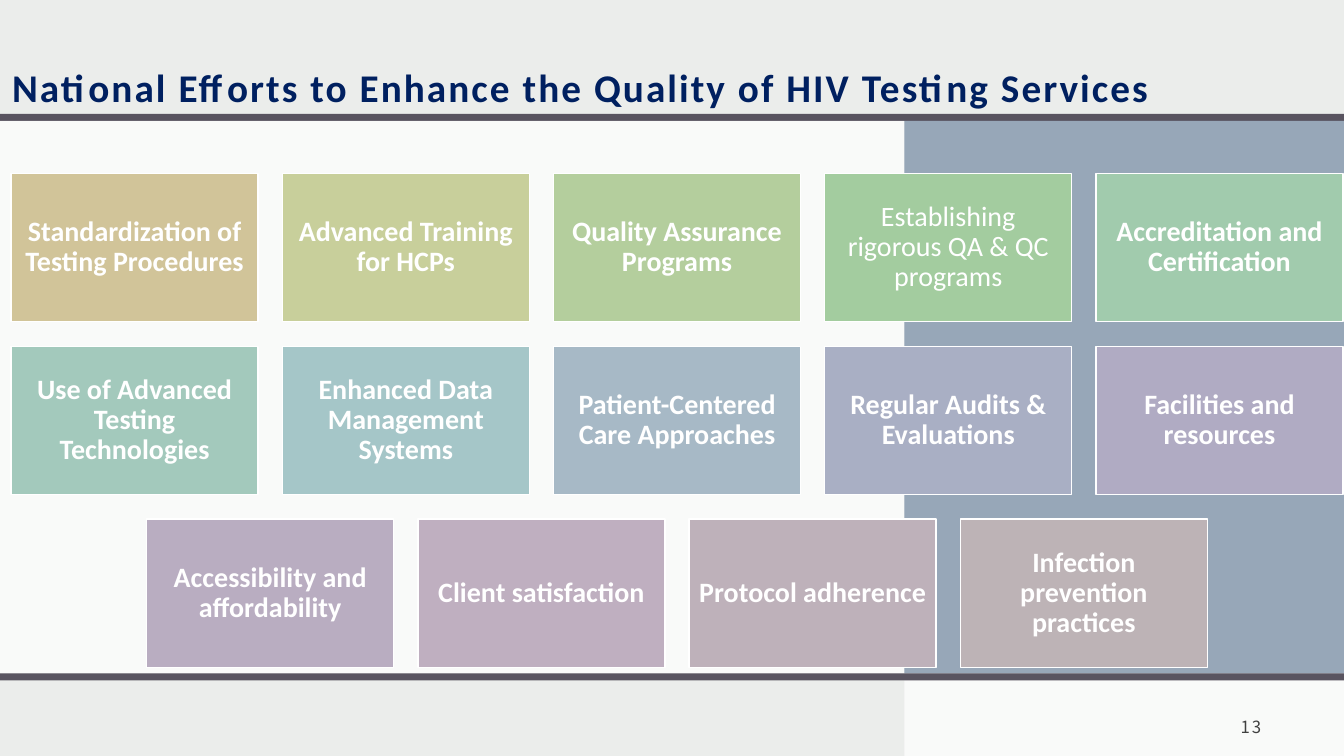
from dataclasses import dataclass

from pptx import Presentation
from pptx import util as u
from pptx.dml.color import RGBColor
from pptx.enum import shapes, text
from pptx.oxml.ns import qn
from lxml import etree

COLOURS = {
    "ground": "EBEDEB", "white": "FFFFFF", "rule": "595460",
    "slate": "97A7B8", "navy": "002060", "grey": "404040",
}
WIDTH, HEIGHT = 13.33, 7.5

# Card grid, in inches
GRID_LEFT, GRID_TOP = 0.11, 1.72
CARD_WIDTH, CARD_HEIGHT = 2.45, 1.47
COLUMN_STEP, ROW_STEP = 2.69, 1.715
COLUMNS = 5

# Horizontal and vertical divisions, in inches
SPLIT, BODY_TOP, FOOT_TOP, RULE = 8.97, 1.2, 6.68, 0.07


@dataclass
class Area:
    left: float
    top: float
    width: float
    height: float


@dataclass
class Panel:
    area: Area
    colour: str
    opacity: int = 100


@dataclass
class Card:
    label: str
    colour: str
    bold: bool = True


PANELS = [
    Panel(Area(0, BODY_TOP - RULE, WIDTH, RULE), "rule"),
    Panel(Area(0, BODY_TOP, SPLIT, FOOT_TOP - BODY_TOP), "white", 75),
    Panel(Area(SPLIT, FOOT_TOP + RULE, WIDTH - SPLIT, HEIGHT - FOOT_TOP - RULE), "white", 75),
    Panel(Area(SPLIT, BODY_TOP, WIDTH - SPLIT, FOOT_TOP - BODY_TOP), "slate"),
    Panel(Area(0, FOOT_TOP, WIDTH, RULE), "rule"),
]

CARD_ROWS = [
    [
        Card("Standardization of Testing Procedures", "D1C499"),
        Card("Advanced Training for HCPs", "C8CF9B"),
        Card("Quality Assurance Programs", "B4CE9D"),
        Card("Establishing rigorous QA & QC programs", "A3CC9F", bold=False),
        Card("Accreditation and Certification", "A1CBAD"),
    ],
    [
        Card("Use of Advanced Testing Technologies", "A3C9BC"),
        Card("Enhanced Data Management Systems", "A5C6C8"),
        Card("Patient-Centered Care Approaches", "A7B9C6"),
        Card("Regular Audits & Evaluations", "A9AFC4"),
        Card("Facilities and resources", "B0ABC3"),
    ],
    [
        Card("Accessibility and affordability", "B9ADC1"),
        Card("Client satisfaction", "BFAFC0"),
        Card("Protocol adherence", "BEB1BA"),
        Card("Infection prevention practices", "BDB3B6"),
    ],
]


def rgb(colour: str) -> RGBColor:
    return RGBColor.from_string(COLOURS.get(colour, colour))


def inches(area: Area) -> list:
    return [u.Inches(length) for length in (area.left, area.top, area.width, area.height)]


def add_box(page, area: Area, colour: str, outline: str = "", opacity: int = 100):
    box = page.shapes.add_shape(shapes.MSO_SHAPE.RECTANGLE, *inches(area))
    box.shadow.inherit = False
    box.fill.solid()
    box.fill.fore_color.rgb = rgb(colour)
    if opacity < 100:
        tint = box.fill._xPr.find(".//" + qn("a:srgbClr"))
        etree.SubElement(tint, qn("a:alpha")).set("val", str(opacity * 1000))
    if outline:
        box.line.color.rgb = rgb(outline)
        box.line.width = u.Pt(1)
    else:
        box.line.fill.background()
    return box


def write(box, words: str, *, size: float, colour: str, font: str = "Calibri",
          bold: bool = False, align=text.PP_ALIGN.LEFT, anchor=text.MSO_ANCHOR.BOTTOM,
          insets: tuple = (0.12, 0.12, 0.12, 0.1), tracking: float = 0,
          line_spacing: float = 1.0) -> None:
    frame = box.text_frame
    frame.word_wrap = True
    frame.vertical_anchor = anchor
    (frame.margin_left, frame.margin_top,
     frame.margin_right, frame.margin_bottom) = map(u.Inches, insets)
    para = frame.paragraphs[0]
    para.alignment = align
    para.line_spacing = line_spacing
    span = para.add_run()
    span.text = words
    span.font.size = u.Pt(size)
    span.font.name = font
    span.font.bold = bold
    span.font.color.rgb = rgb(colour)
    if tracking:
        span.font._element.set("spc", str(int(tracking * 100)))


def add_card(page, card: Card, column: float, row: int) -> None:
    area = Area(GRID_LEFT + column * COLUMN_STEP, GRID_TOP + row * ROW_STEP,
                CARD_WIDTH, CARD_HEIGHT)
    box = add_box(page, area, card.colour, outline="white")
    write(box, card.label, size=20, colour="white", bold=card.bold,
          align=text.PP_ALIGN.CENTER, anchor=text.MSO_ANCHOR.MIDDLE,
          insets=(0.08,) * 4, line_spacing=0.9)


def main() -> None:
    deck = Presentation()
    deck.slide_width, deck.slide_height = u.Inches(WIDTH), u.Inches(HEIGHT)
    page = deck.slides.add_slide(deck.slide_layouts[6])

    # Background panels and rules
    page.background.fill.solid()
    page.background.fill.fore_color.rgb = rgb("ground")
    for panel in PANELS:
        add_box(page, panel.area, panel.colour, opacity=panel.opacity)

    # Title
    title = page.shapes.add_textbox(*inches(Area(0, 0, WIDTH, 1.19)))
    write(title, "National Efforts to Enhance the Quality of HIV Testing Services",
          size=28, colour="navy", bold=True, tracking=1.5)

    # Cards, each row centred on the grid
    for row, cards in enumerate(CARD_ROWS):
        indent = (COLUMNS - len(cards)) / 2
        for place, card in enumerate(cards):
            add_card(page, card, indent + place, row)

    # Page number
    number = page.shapes.add_textbox(*inches(Area(11.56, 6.9, 1.07, 0.5)))
    write(number, "13", size=12, colour="grey", font="Noto Sans CJK JP",
          align=text.PP_ALIGN.RIGHT, tracking=1.5)

    deck.save("out.pptx")


if __name__ == "__main__":
    main()
